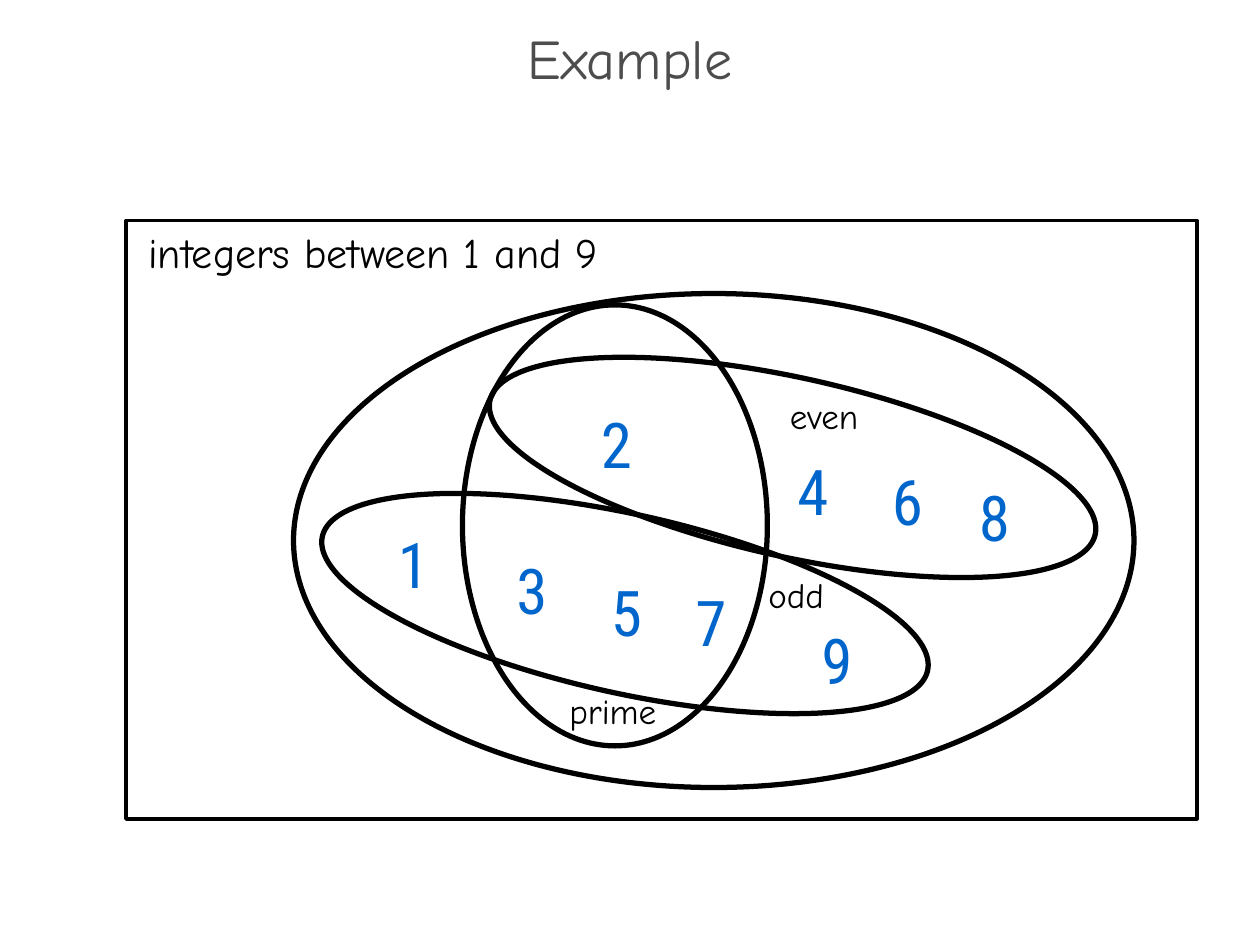
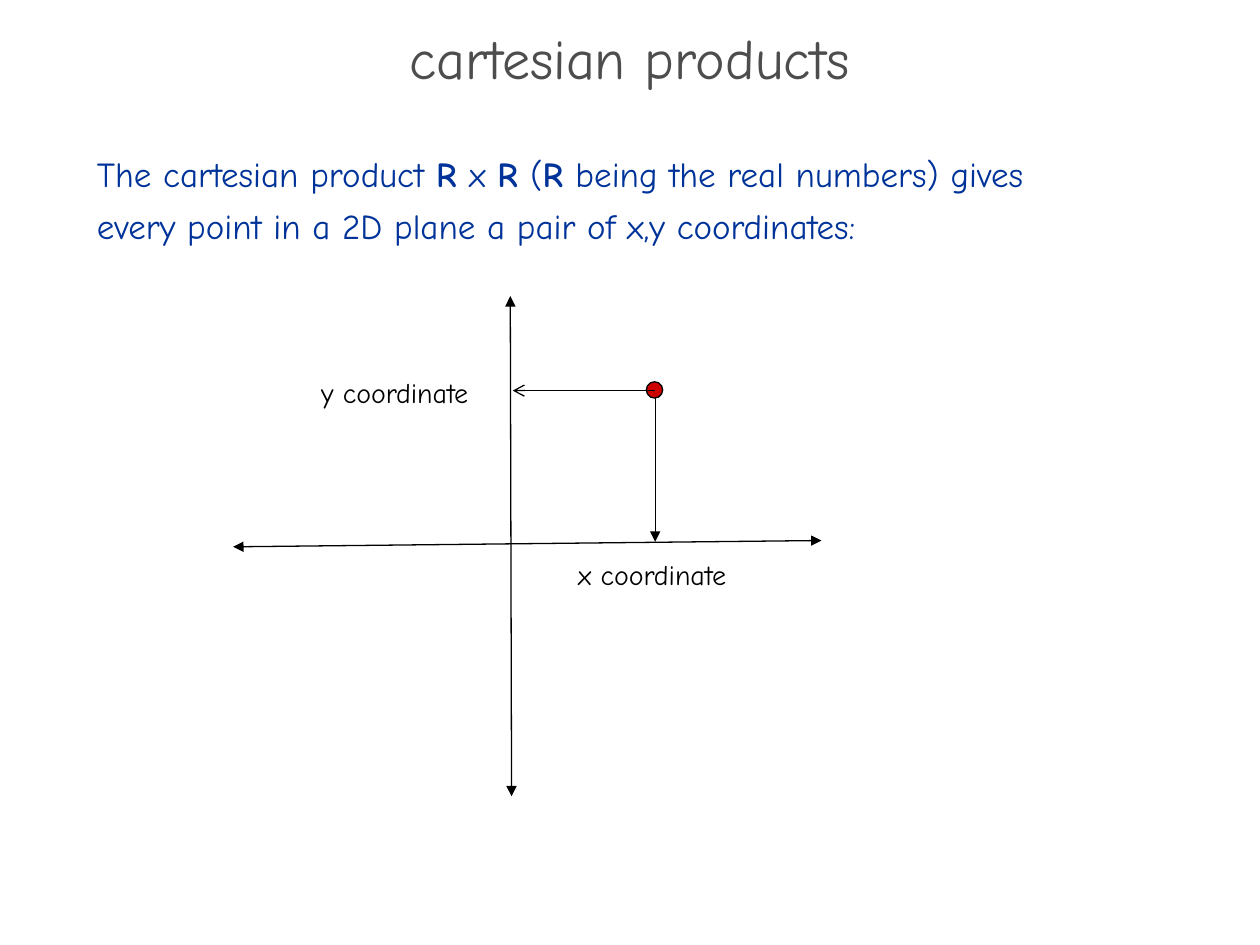
from lxml import etree
from pptx import Presentation
from pptx.dml.color import RGBColor
from pptx.enum.shapes import MSO_CONNECTOR as CONN, MSO_SHAPE as SHAPE
from pptx.enum.text import MSO_ANCHOR as ANCHOR, PP_ALIGN as ALIGN
from pptx.oxml.ns import qn
from pptx.util import Inches, Pt

HAND, DIGIT = "Comic Neue", "Roboto Condensed"
BLACK, GREY, NAVY = "000000", "4D4D4D", "003399"
BLUE, PALE, RED = "0066CC", "99CCFF", "CC0000"


def rgb(value):
    return RGBColor.from_string(value)


class Deck:
    """Holds the shared style and the slide being filled."""

    def __init__(self):
        self.prs = Presentation()
        self.prs.slide_width, self.prs.slide_height = Inches(10), Inches(7.5)
        self.s = None

    def slide(self, title):
        self.s = self.prs.slides.add_slide(self.prs.slide_layouts[6])
        self.text([title], 0, 0.27, 10, 0.5, size=32, color=GREY, wrap=True,
                  anchor=ANCHOR.MIDDLE,
                  para={"alignment": ALIGN.CENTER, "line_spacing": 0.7})

    def text(self, lines, x, y, w, h, size=20, color=BLACK, font=HAND,
             wrap=False, anchor=ANCHOR.TOP, para=None, outline=None):
        """Adds one paragraph per line; ** switches bold on and off."""
        sp = self.s.shapes.add_textbox(*map(Inches, (x, y, w, h)))
        tf = sp.text_frame
        tf.word_wrap, tf.vertical_anchor = wrap, anchor
        for i, line in enumerate(lines):
            p = tf.add_paragraph() if i else tf.paragraphs[0]
            for name, value in (para or {}).items():
                setattr(p, name, value)
            for j, part in enumerate(line.split("**")):
                r = p.add_run()
                r.text = part
                style = {"name": font, "size": Pt(size), "bold": j % 2 == 1}
                for name, value in style.items():
                    setattr(r.font, name, value)
                r.font.color.rgb = rgb(color)
                if outline:
                    self.outline(r, outline)

    def outline(self, r, color):
        ln = etree.Element(qn("a:ln"), w=str(Pt(1.5)))
        fill = etree.SubElement(ln, qn("a:solidFill"))
        etree.SubElement(fill, qn("a:srgbClr"), val=color)
        r.font._element.insert(0, ln)

    def shape(self, kind, x, y, w, h, width, fill=None, rotation=0):
        sp = self.s.shapes.add_shape(kind, *map(Inches, (x, y, w, h)))
        sp.shadow.inherit = False
        sp.rotation = rotation
        if fill:
            sp.fill.solid()
            sp.fill.fore_color.rgb = rgb(fill)
        else:
            sp.fill.background()
        sp.line.color.rgb = rgb(BLACK)
        sp.line.width = Pt(width)

    def arrow(self, x1, y1, x2, y2, head=None, tail=None):
        c = self.s.shapes.add_connector(
            CONN.STRAIGHT, *map(Inches, (x1, y1, x2, y2)))
        c.line.color.rgb = rgb(BLACK)
        c.line.width = Pt(0.75)
        ln = c.line._get_or_add_ln()
        for tag, end in (("a:headEnd", head), ("a:tailEnd", tail)):
            if end:
                etree.SubElement(ln, qn(tag), type=end)
        etree.SubElement(c._element.spPr, qn("a:effectLst"))


def venn_slide(deck):
    deck.slide("Example")

    # Numbers 1 to 9, in order
    places = [(3.06, 4.12), (4.67, 3.17), (4, 4.33), (6.23, 3.54), (4.75, 4.5),
              (6.98, 3.62), (5.42, 4.58), (7.67, 3.75), (6.42, 4.88)]
    for number, (x, y) in enumerate(places, 1):
        deck.text([str(number)], x, y, 0.27, 0.62, size=36, color=BLUE,
                  font=DIGIT, outline=PALE, para={"alignment": ALIGN.CENTER})

    # Sets: all, prime, odd, even
    for x, y, w, h, tilt in [(2.33, 2.33, 6.67, 3.92, 0),
                             (3.67, 2.42, 2.42, 3.5, 0),
                             (2.5, 4.08, 4.92, 1.42, 12.5),
                             (3.83, 3, 4.92, 1.42, 12.5)]:
        deck.shape(SHAPE.OVAL, x, y, w, h, 3, rotation=tilt)

    # Universe and set labels
    deck.shape(SHAPE.RECTANGLE, 1, 1.75, 8.5, 4.75, 2)
    deck.text(["integers between 1 and 9"], 1.08, 1.75, 4.13, 0.5, size=24)
    for label, x, y, w in [("even", 6.17, 3.08, 0.81), ("odd", 6, 4.5, 0.67),
                           ("prime", 4.42, 5.42, 0.9)]:
        deck.text([label], x, y, w, 0.44)


def plane_slide(deck):
    deck.slide("cartesian products")
    deck.text(["The cartesian product **R **x **R **(**R **being the real numbers) gives",
               "every point in a 2D plane a pair of x,y coordinates:"],
              0.67, 1.16, 8.58, 1, color=NAVY, wrap=True,
              para={"space_after": Pt(6)})

    # Axes
    for ends in [(1.85, 4.34, 6.52, 4.29), (4.05, 2.35, 4.06, 6.32)]:
        deck.arrow(*ends, head="triangle", tail="triangle")

    # Point and its projections
    deck.shape(SHAPE.OVAL, 5.13, 3.03, 0.13, 0.13, 0.75, fill=RED)
    deck.arrow(5.2, 3.16, 5.2, 4.3, tail="triangle")
    deck.arrow(4.07, 3.1, 5.2, 3.1, head="arrow")
    deck.text(["x coordinate"], 4.49, 4.38, 1.52, 0.37, size=16)
    deck.text(["y coordinate"], 2.45, 2.93, 1.5, 0.37, size=16)


def main():
    deck = Deck()
    venn_slide(deck)
    plane_slide(deck)
    deck.prs.save("out.pptx")


if __name__ == "__main__":
    main()
